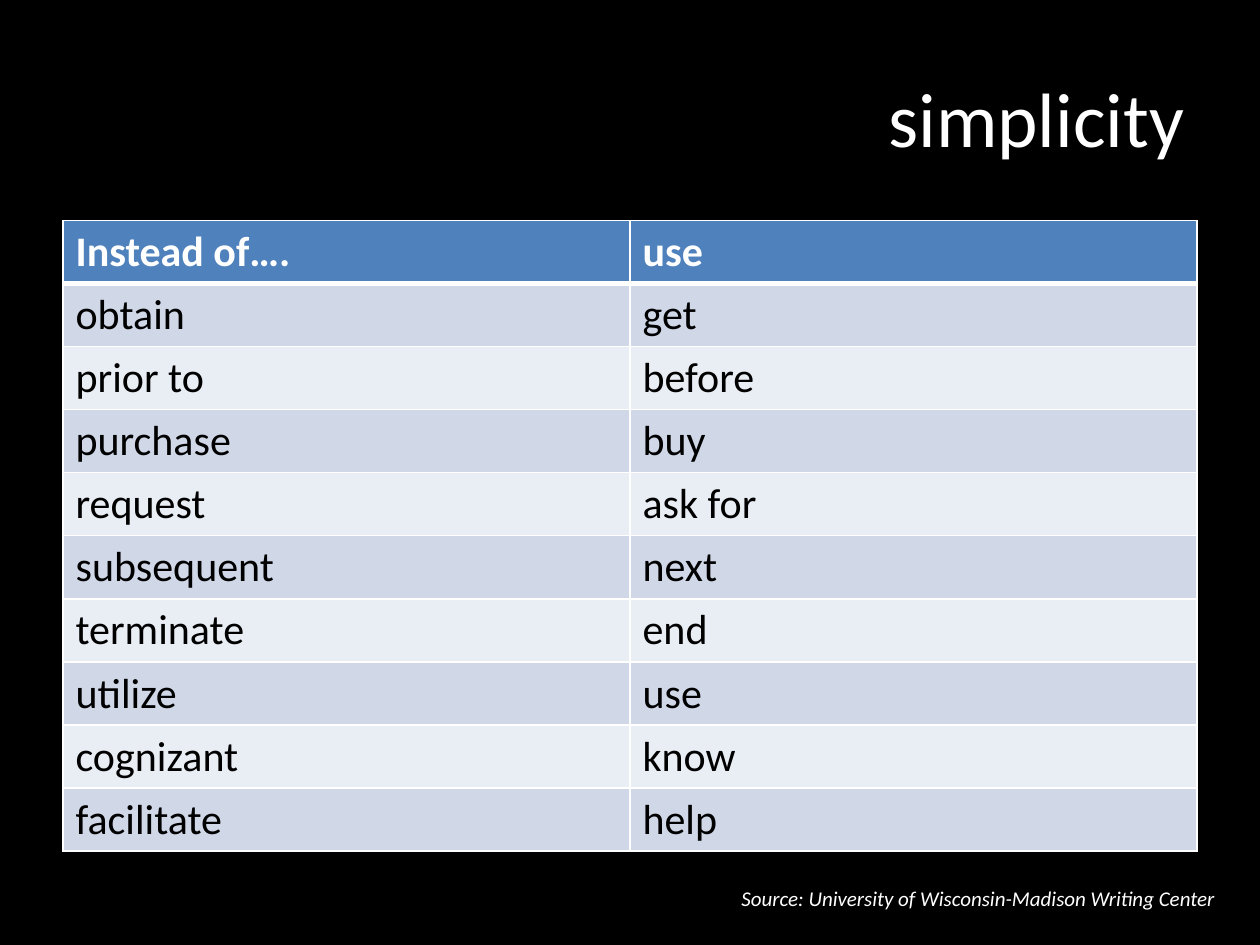
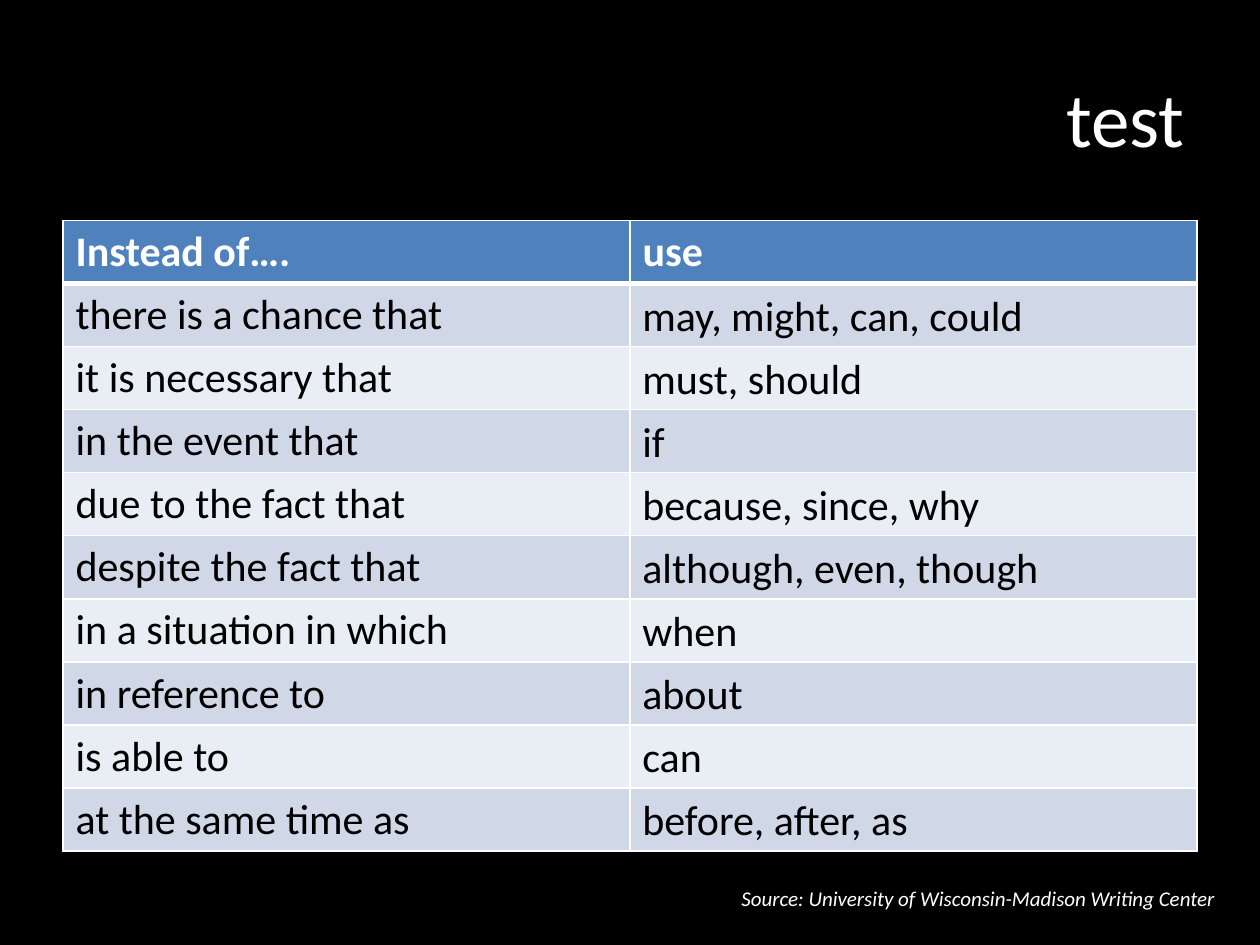
from dataclasses import dataclass

from lxml import etree
from pptx import Presentation
from pptx.dml.color import RGBColor
from pptx.enum.text import MSO_ANCHOR, MSO_AUTO_SIZE, PP_ALIGN
from pptx.oxml.ns import qn
from pptx.util import Inches, Pt

LEFT, RIGHT = PP_ALIGN.LEFT, PP_ALIGN.RIGHT
TOP, MIDDLE = MSO_ANCHOR.TOP, MSO_ANCHOR.MIDDLE
FIT_SHAPE = MSO_AUTO_SIZE.SHAPE_TO_FIT_TEXT
BLANK_LAYOUT = 6


@dataclass(frozen=True)
class Theme:
    font: str = "Calibri"
    background: str = "000000"
    light: str = "FFFFFF"
    dark: str = "000000"
    header: str = "4F81BD"
    bands: tuple = ("D0D8E8", "E9EDF4")
    title_size: int = 44
    body_size: int = 24
    source_size: int = 12
    thin_line: int = 1
    thick_line: int = 3


# Content
HEADINGS = ("Instead of….", "use")
SOURCE = "Source: University of Wisconsin-Madison Writing Center "
SIMPLE_WORDS = [
    ("obtain", "get"),
    ("prior to", "before"),
    ("purchase", "buy"),
    ("request", "ask for"),
    ("subsequent", "next"),
    ("terminate", "end"),
    ("utilize", "use"),
    ("cognizant", "know"),
    ("facilitate", "help"),
]
TEST_PHRASES = [
    ("there is a chance that", "may, might, can, could"),
    ("it is necessary that", "must, should"),
    ("in the event that", "if"),
    ("due to the fact that", "because, since, why"),
    ("despite the fact that", "although, even, though"),
    ("in a situation in which", "when"),
    ("in reference to", "about"),
    ("is able to", "can"),
    ("at the same time as", "before, after, as"),
]

# Table grid, in inches
TABLE_LEFT, TABLE_TOP = 0.5, 1.75
COLUMN_WIDTH, ROW_HEIGHT = 4.5, 0.5


class WordDeck:
    def __init__(self, theme):
        self.theme = theme
        self.deck = Presentation()
        self.deck.slide_width, self.deck.slide_height = Inches(10), Inches(7.5)
        self.slide = None

    def add_slide(self, title):
        """Start a slide with the shared background and title."""
        theme = self.theme
        self.slide = self.deck.slides.add_slide(self.deck.slide_layouts[BLANK_LAYOUT])
        fill = self.slide.background.fill
        fill.solid()
        fill.fore_color.rgb = RGBColor.from_string(theme.background)
        self.text(title, 0.5, 0.3, 9, 1.25, theme.title_size, theme.light,
                  align=RIGHT, anchor=MIDDLE)

    def source_line(self):
        self.text(SOURCE, 4.6, 6.98, 5.18, 0.3, self.theme.source_size,
                  self.theme.light, align=RIGHT, italic=True, grow=True)

    def add_words(self, paragraph, words, size, color, bold=False, italic=False):
        run = paragraph.add_run()
        run.text = words
        font = run.font
        font.name, font.size = self.theme.font, Pt(size)
        font.bold, font.italic = bold, italic
        font.color.rgb = RGBColor.from_string(color)

    def text(self, words, left, top, width, height, size, color,
             align=LEFT, anchor=TOP, italic=False, grow=False):
        box = self.slide.shapes.add_textbox(
            Inches(left), Inches(top), Inches(width), Inches(height))
        frame = box.text_frame
        frame.word_wrap = True
        frame.vertical_anchor = anchor
        if grow:
            frame.auto_size = FIT_SHAPE
        paragraph = frame.paragraphs[0]
        paragraph.alignment = align
        self.add_words(paragraph, words, size, color, italic=italic)

    def border(self, cell, top, bottom):
        """Outline a cell; top and bottom are line widths in points."""
        thin = self.theme.thin_line
        properties = cell._tc.get_or_add_tcPr()
        edges = (("a:lnL", thin), ("a:lnR", thin), ("a:lnT", top), ("a:lnB", bottom))
        for position, (edge, width) in enumerate(edges):
            line = etree.Element(qn(edge), w=str(Pt(width)))
            fill = etree.SubElement(line, qn("a:solidFill"))
            etree.SubElement(fill, qn("a:srgbClr"), val=self.theme.light)
            properties.insert(position, line)

    def table(self, rows):
        """Draw a header row and banded rows; an empty string leaves a cell blank."""
        theme = self.theme
        lines = [HEADINGS, *rows]
        grid = self.slide.shapes.add_table(
            len(lines), len(HEADINGS), Inches(TABLE_LEFT), Inches(TABLE_TOP),
            Inches(COLUMN_WIDTH * len(HEADINGS)), Inches(ROW_HEIGHT * len(lines))).table
        for r, line in enumerate(lines):
            is_header = r == 0
            band = theme.header if is_header else theme.bands[(r - 1) % 2]
            color = theme.light if is_header else theme.dark
            top = theme.thick_line if r == 1 else theme.thin_line
            bottom = theme.thick_line if is_header else theme.thin_line
            for c, words in enumerate(line):
                cell = grid.cell(r, c)
                cell.fill.solid()
                cell.fill.fore_color.rgb = RGBColor.from_string(band)
                self.border(cell, top, bottom)
                if words:
                    self.add_words(cell.text_frame.paragraphs[0], words,
                                   theme.body_size, color, bold=is_header)

    def answers(self, words):
        """Lay one text box over each blank cell of the second column."""
        for row, answer in enumerate(words, start=1):
            self.text(answer, TABLE_LEFT + COLUMN_WIDTH, TABLE_TOP + row * ROW_HEIGHT,
                      3.37, 0.5, self.theme.body_size, self.theme.dark, grow=True)


def main():
    words = WordDeck(Theme())

    # Simpler words
    words.add_slide("simplicity")
    words.table(SIMPLE_WORDS)
    words.source_line()

    # Test with answers over the table
    words.add_slide("test")
    words.table([(phrase, "") for phrase, _ in TEST_PHRASES])
    words.source_line()
    words.answers([answer for _, answer in TEST_PHRASES])

    words.deck.save("out.pptx")


if __name__ == "__main__":
    main()
